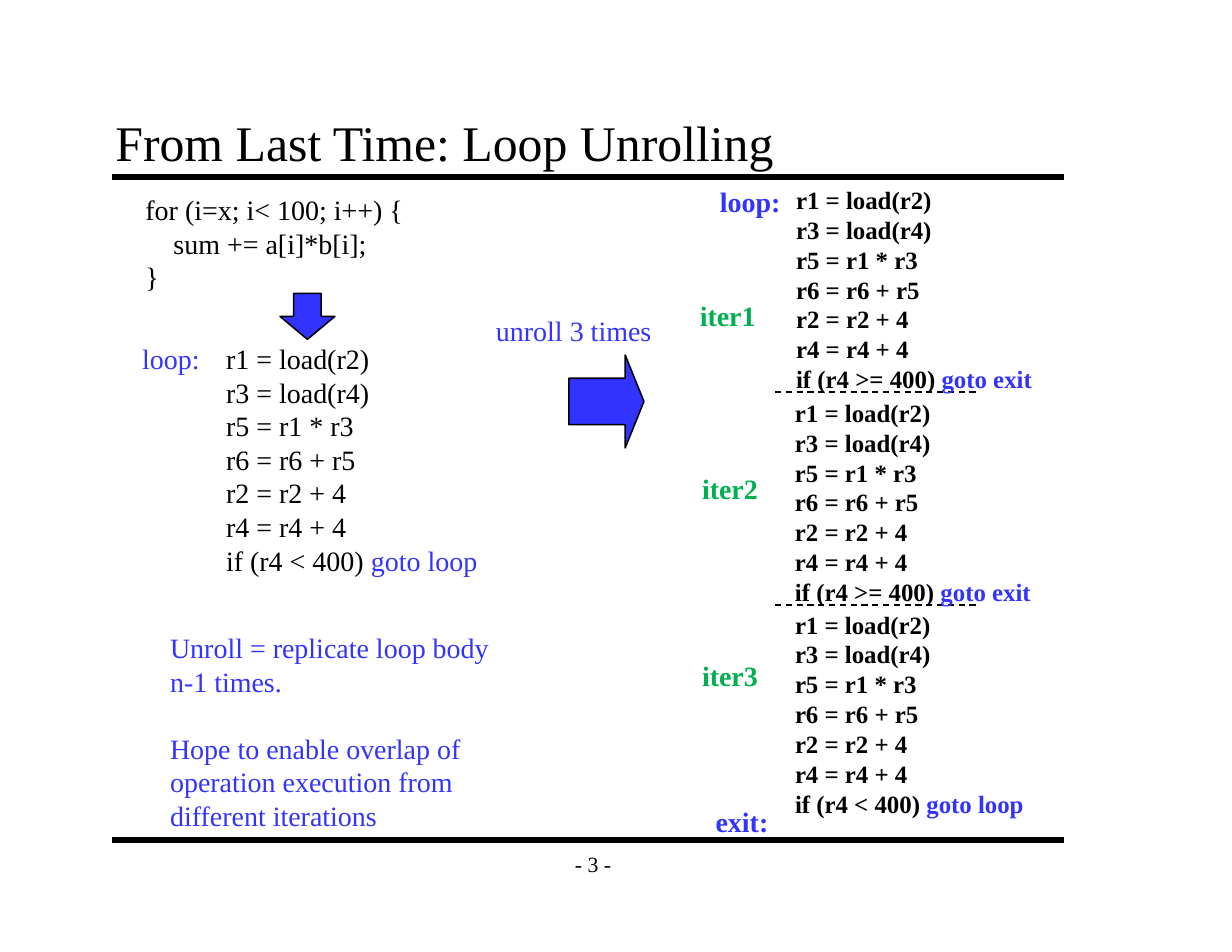
"""Build the loop unrolling slide."""
from lxml import etree
from pptx import Presentation
from pptx import util as u
from pptx.dml.color import RGBColor
from pptx.enum import dml, shapes, text
from pptx.oxml.ns import qn

BLACK = RGBColor(0, 0, 0)
BLUE = RGBColor(0x33, 0x33, 0xFF)
GREEN = RGBColor(0, 0xB0, 0x50)

TITLE = "From Last Time: Loop Unrolling"
BODY = ["r1 = load(r2)", "r3 = load(r4)", "r5 = r1 * r3",
        "r6 = r6 + r5", "r2 = r2 + 4", "r4 = r4 + 4"]
REPEAT = BODY + [("if (r4 < 400) ", "goto loop")]
LEAVE = BODY + [("if (r4 >= 400) ", "goto exit")]
SOURCE = ["for (i=x; i< 100; i++) {", "sum += a[i]*b[i];", "}"]
NOTES = ["Unroll = replicate loop body", "n-1 times.",
         "Hope to enable overlap of", "operation execution from", "different iterations"]

PLAIN = {"size": u.Pt(18), "bold": False}
STRONG = {"size": u.Pt(18), "bold": True}
UNROLLED = {"size": u.Pt(16), "bold": True}

BLOCKS = [
    ((1.92, 3, 2.45, 2.2), REPEAT, PLAIN, BLACK),
    ((1.17, 3, 0.72, 0.4), ["loop:"], PLAIN, BLUE),
    ((7.01, 1.6, 2.36, 1.99), LEAVE, UNROLLED, BLACK),
    ((7, 3.5, 2.34, 2.26), LEAVE, UNROLLED, BLACK),
    ((7, 5.39, 2.25, 1.97), REPEAT, UNROLLED, BLACK),
    ((6.15, 2.62, 0.7, 0.4), ["iter1"], STRONG, GREEN),
    ((6.17, 4.16, 0.7, 0.4), ["iter2"], STRONG, GREEN),
    ((6.17, 5.83, 0.7, 0.4), ["iter3"], STRONG, GREEN),
    ((6.33, 1.6, 0.74, 0.4), ["loop:"], STRONG, BLUE),
    ((4.33, 2.75, 1.59, 0.4), ["unroll 3 times"], PLAIN, BLUE),
    ((6.29, 7.13, 0.68, 0.4), ["exit:"], STRONG, BLUE),
]
RULES = [(1, 9.5, 1.58, 4, None), (1, 9.5, 7.5, 4, None),
         (6.92, 8.75, 3.5, 1, dml.MSO_LINE.DASH), (6.92, 8.75, 5.4, 1, dml.MSO_LINE.DASH)]
ARROWS = [(shapes.MSO_SHAPE.RIGHT_ARROW, (5.08, 3.17, 0.67, 0.83), (0.5, 0.25)),
          (shapes.MSO_SHAPE.DOWN_ARROW, (2.5, 2.62, 0.49, 0.41), (0.5, 0.5))]


def inches(values):
    return [u.Inches(value) for value in values]


def apply(target, settings):
    for name, value in settings.items():
        setattr(target, name, value)


def write(paragraph, pieces, style, color):
    for piece, tint in zip(pieces, (color, BLUE)):
        run = paragraph.add_run()
        run.text = piece
        apply(run.font, {"name": "Times New Roman", **style})
        run.font.color.rgb = tint


def add_block(slide, box, lines, style, color):
    frame = slide.shapes.add_textbox(*inches(box)).text_frame
    apply(frame, {"word_wrap": False, "auto_size": text.MSO_AUTO_SIZE.SHAPE_TO_FIT_TEXT})
    for index, line in enumerate(lines):
        paragraph = frame.add_paragraph() if index else frame.paragraphs[0]
        write(paragraph, (line,) if isinstance(line, str) else line, style, color)
    return frame


def add_rule(slide, left, right, y, width, dash):
    rule = slide.shapes.add_connector(
        shapes.MSO_CONNECTOR.STRAIGHT, *inches((left, y, right, y)))
    rule.line.color.rgb = BLACK
    apply(rule.line, {"width": u.Pt(width), "dash_style": dash})
    etree.SubElement(rule._element.spPr, qn("a:effectLst"))


def add_arrow(slide, kind, box, adjustments):
    arrow = slide.shapes.add_shape(kind, *inches(box))
    arrow.shadow.inherit = False
    arrow.fill.solid()
    arrow.fill.fore_color.rgb = BLUE
    arrow.line.color.rgb = BLACK
    arrow.line.width = u.Pt(1)
    for index, value in enumerate(adjustments):
        arrow.adjustments[index] = value


def set_title(slide):
    title = slide.shapes.title
    apply(title, dict(zip(("left", "top", "width", "height"), inches((0.92, 0.92, 8.5, 0.67)))))
    frame = title.text_frame
    apply(frame, {"vertical_anchor": text.MSO_ANCHOR.BOTTOM, "word_wrap": True,
                  "auto_size": text.MSO_AUTO_SIZE.NONE,
                  "margin_left": u.Inches(0.11), "margin_right": u.Inches(0.11),
                  "margin_top": u.Inches(0.06), "margin_bottom": u.Inches(0.06)})
    frame.paragraphs[0].alignment = text.PP_ALIGN.LEFT
    write(frame.paragraphs[0], (TITLE,), {"size": u.Pt(32)}, BLACK)


def main():
    deck = Presentation()
    apply(deck, {"slide_width": u.Inches(11), "slide_height": u.Inches(8.5)})
    slide = deck.slides.add_slide(deck.slide_layouts[5])
    set_title(slide)
    for rule in RULES:
        add_rule(slide, *rule)
    for block in BLOCKS:
        add_block(slide, *block)

    source = add_block(slide, (1.2, 1.67, 2.52, 1.01), SOURCE, PLAIN, BLACK)
    source.paragraphs[1]._p.get_or_add_pPr().set("marL", str(u.Inches(0.25)))
    notes = add_block(slide, (1.42, 5.58, 3.14, 1.92), NOTES, PLAIN, BLUE)
    notes.paragraphs[2].space_before = u.Pt(21.6)
    number = add_block(slide, (4.92, 7.5, 0.75, 0.42), ["- 3 -"], {"size": u.Pt(14)}, BLACK)
    apply(number, {"vertical_anchor": text.MSO_ANCHOR.MIDDLE,
                   "auto_size": text.MSO_AUTO_SIZE.NONE})
    number.paragraphs[0].alignment = text.PP_ALIGN.CENTER

    for arrow in ARROWS:
        add_arrow(slide, *arrow)
    deck.save("out.pptx")


if __name__ == "__main__":
    main()
